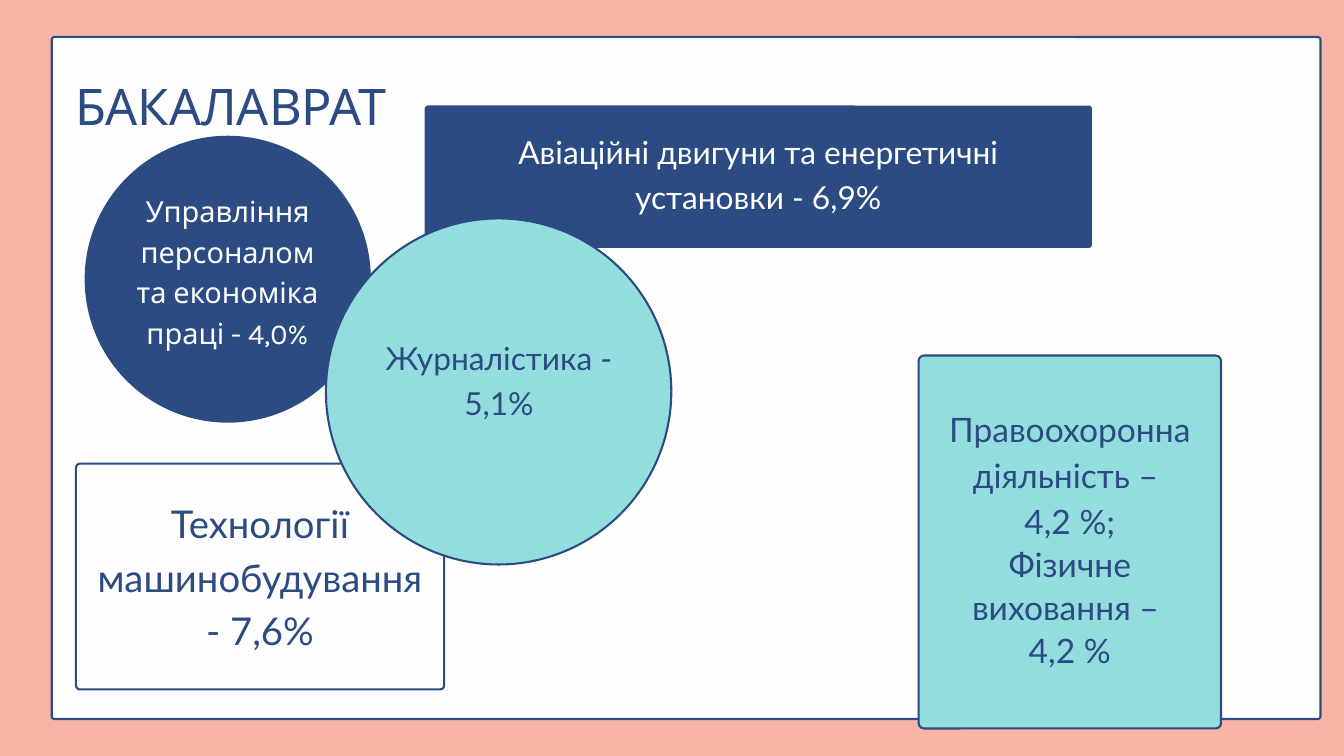
import pptx
import pptx.util
import pptx.dml.color
import pptx.enum.shapes
import pptx.enum.text

Inches = pptx.util.Inches
Pt = pptx.util.Pt
KINDS = pptx.enum.shapes.MSO_SHAPE
ALIGN = pptx.enum.text.PP_ALIGN
ANCHOR = pptx.enum.text.MSO_ANCHOR

NAVY, MINT, WHITE, PINK = "2B4B82", "94DDDE", "FEFEFE", "F7B4A7"


def paint(target, color):
    """Give a fill a solid colour."""
    target.solid()
    target.fore_color.rgb = pptx.dml.color.RGBColor.from_string(color)


def draw(slide, kind, box, fill, line=None, round=None):
    """Add a plain shape; round is the corner radius in inches."""
    shape = slide.shapes.add_shape(kind, *map(Inches, box))
    shape.shadow.inherit = False
    paint(shape.fill, fill)
    if line:
        paint(shape.line.fill, line)
        shape.line.width = Pt(2.25)
    else:
        shape.line.fill.background()
    if round is not None:
        shape.adjustments[0] = round / min(box[2:])


def write(slide, box, text, size, lead, color=NAVY, font="Lato", inset=0,
          align=ALIGN.CENTER, anchor=ANCHOR.MIDDLE):
    """Add text, one paragraph a line; lead is a spacing or one per line."""
    frame = slide.shapes.add_textbox(*map(Inches, box)).text_frame
    frame.word_wrap = True
    frame.vertical_anchor = anchor
    frame.margin_left = frame.margin_right = Inches(inset)
    frame.margin_top = frame.margin_bottom = Inches(inset)
    lines = text.split("\n")
    leads = lead if isinstance(lead, list) else [lead] * len(lines)
    for i, (line, space) in enumerate(zip(lines, leads)):
        para = frame.paragraphs[0] if i == 0 else frame.add_paragraph()
        para.alignment = align
        para.line_spacing = Pt(space)
        run = para.add_run()
        run.text = line
        run.font.size = Pt(size)
        run.font.name = font
        paint(run.font.fill, color)


def card(slide, box, text, fill, line=None, round=0.08, rise=0.14, **style):
    """Rounded box whose text area starts a little above its top edge."""
    left, top, width, height = box
    draw(slide, KINDS.ROUNDED_RECTANGLE, box, fill, line, round)
    write(slide, (left, top - rise, width, height + rise), text, **style)


def disc(slide, box, text, fill, line=None, area=(0, 0, 1, 1), **style):
    """Circle with text in an area offset from the circle's corner."""
    left, top = box[:2]
    draw(slide, KINDS.OVAL, box, fill, line)
    write(slide, (left + area[0], top + area[1], *area[2:]), text, **style)


def main():
    deck = pptx.Presentation()
    deck.slide_width, deck.slide_height = Inches(20), Inches(11.25)
    slide = deck.slides.add_slide(deck.slide_layouts[6])
    paint(slide.background.fill, PINK)

    # White panel
    draw(slide, KINDS.ROUNDED_RECTANGLE, (0.77, 0.55, 18.88, 10.15),
         WHITE, NAVY, 0.04)

    # Programmes, from back to front
    card(slide, (6.32, 1.57, 9.93, 2.12),
         "Авіаційні двигуни та енергетичні установки - 6,9%", NAVY,
         round=0.05, rise=0.17, size=34, lead=47.6, color=WHITE, inset=0.28)
    disc(slide, (1.26, 2.02, 4.26, 4.27),
         "Управління персоналом та економіка праці - 4,0%", NAVY,
         area=(0.39, 0.1, 3.47, 3.77), size=31, lead=43.4, color=WHITE,
         font="Karla", inset=0.28)
    card(slide, (13.67, 5.29, 4.5, 5.55),
         "Правоохоронна діяльність – \n4,2 %;\nФізичне виховання – \n4,2 %",
         MINT, NAVY, size=36, lead=[49, 49, 46.2, 46.2], inset=0.28)
    card(slide, (1.13, 6.9, 5.48, 3.36),
         "Технології машинобудування - 7,6%", WHITE, NAVY,
         round=0.06, rise=0.11, size=41, lead=57.4, inset=0.21)
    disc(slide, (4.85, 3.25, 5.14, 5.15), "Журналістика - 5,1%", MINT, NAVY,
         area=(0.48, 0.06, 4.19, 4.61), size=34, lead=47.6, inset=0.14)

    # Title
    write(slide, (1.12, 1.12, 8.3, 0.9), "БАКАЛАВРАТ", size=54, lead=64.8,
          font="Karla", align=ALIGN.LEFT, anchor=ANCHOR.TOP)

    deck.save("out.pptx")


if __name__ == "__main__":
    main()
